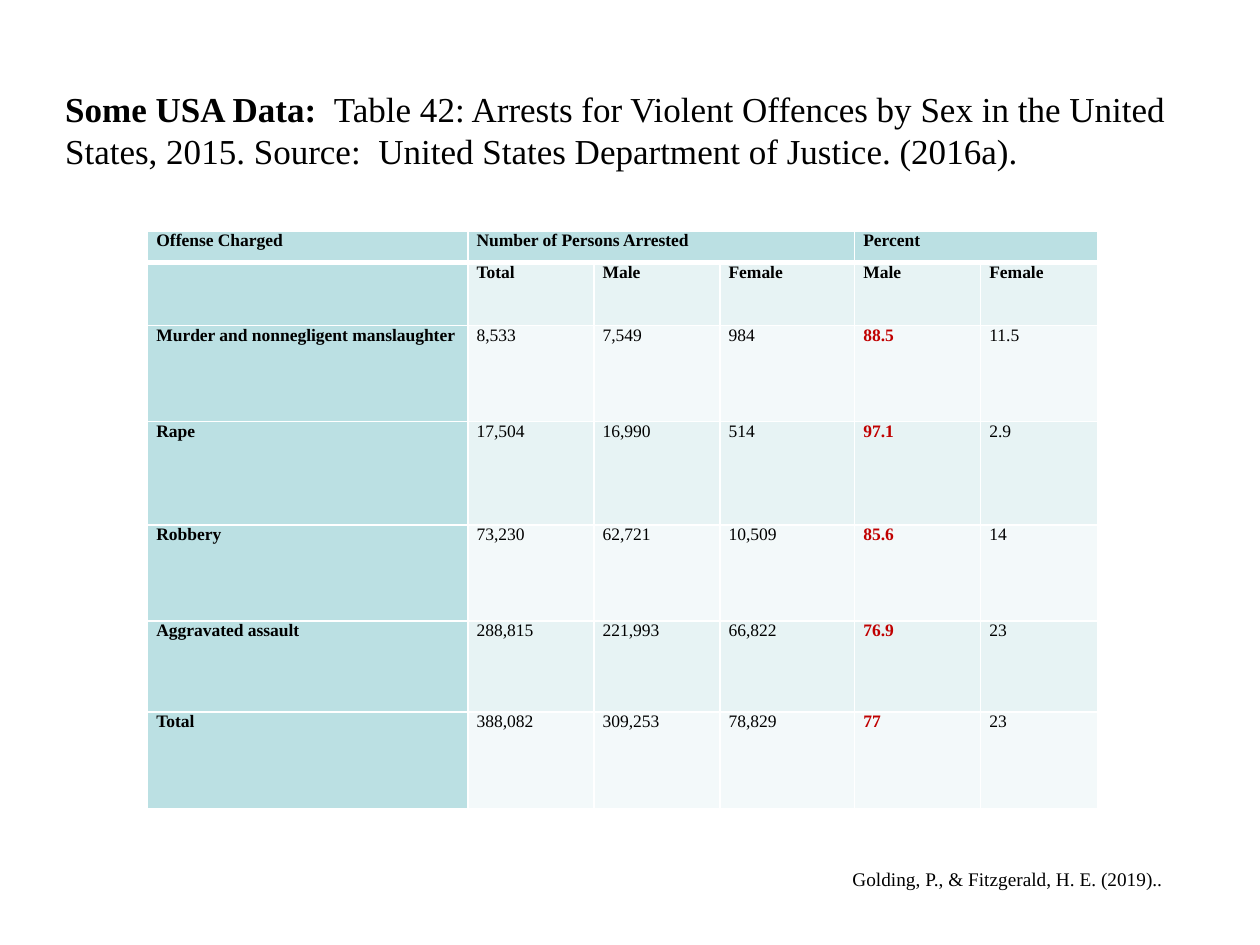
from pptx import Presentation
from pptx.dml.color import RGBColor as RGB
from pptx.enum.text import MSO_ANCHOR as Anchor, MSO_AUTO_SIZE as Auto, PP_ALIGN as Align
from pptx.oxml.ns import qn
from pptx.util import Pt
from lxml.etree import SubElement as Sub

FONT = "Times New Roman"
BLACK = RGB(0x00, 0x00, 0x00)
RED = RGB(0xC0, 0x00, 0x00)
WHITE = RGB(0xFF, 0xFF, 0xFF)
HEAD = RGB(0xBB, 0xE0, 0xE3)
BANDS = (RGB(0xF3, 0xF9, 0xFA), RGB(0xE7, 0xF3, 0xF4))

COLS = (183, 72, 72, 77, 72, 67)
ROWS = (18, 36, 55, 59, 55, 52, 55)
SPANS = ((1, 3), (4, 5))
RED_COL = 4
DATA = (
    ("Offense Charged", "Number of Persons Arrested", "", "", "Percent", ""),
    ("", "Total", "Male", "Female", "Male", "Female"),
    ("Murder and nonnegligent manslaughter", "8,533", "7,549", "984", "88.5", "11.5"),
    ("Rape", "17,504", "16,990", "514", "97.1", "2.9"),
    ("Robbery", "73,230", "62,721", "10,509", "85.6", "14"),
    ("Aggravated assault", "288,815", "221,993", "66,822", "76.9", "23"),
    ("Total", "388,082", "309,253", "78,829", "77", "23"),
)


def add_run(para, text, size, color=BLACK, bold=False, italic=False):
    """Add one formatted run to a paragraph."""
    run = para.add_run()
    run.text = text
    font = run.font
    font.name, font.size, font.bold, font.italic = FONT, Pt(size), bold, italic
    font.color.rgb = color


def add_title(slide):
    """Place and fill the title."""
    title = slide.shapes.title
    title.left, title.top, title.width, title.height = Pt(30), Pt(62), Pt(654), Pt(48)
    frame = title.text_frame
    frame.word_wrap, frame.auto_size = True, Auto.NONE
    frame.vertical_anchor = Anchor.MIDDLE
    frame.margin_bottom = Pt(27)
    para = frame.paragraphs[0]
    para.alignment = Align.LEFT
    add_run(para, "Some USA Data:  ", 20, bold=True)
    add_run(para, "Table 42: Arrests for Violent Offences by Sex in the United States, "
            "2015. Source:  United States Department of Justice. (2016a).", 20)


def set_edges(cell, top, bottom):
    """Draw white borders round a cell."""
    props = cell._tc.get_or_add_tcPr()
    for side, width in (("L", 1), ("R", 1), ("T", top), ("B", bottom)):
        line = Sub(props, qn("a:ln" + side), w=str(Pt(width)))
        Sub(Sub(line, qn("a:solidFill")), qn("a:srgbClr"), val=str(WHITE))


def fill_cell(cell, row, col, text):
    """Format one table cell by its place in the grid."""
    set_edges(cell, 3 if row == 1 else 1, 3 if row == 0 else 1)
    cell.fill.solid()
    cell.fill.fore_color.rgb = HEAD if row == 0 or col == 0 else BANDS[row % 2]
    cell.margin_left = cell.margin_right = Pt(5)
    cell.margin_top = cell.margin_bottom = 0
    if text:
        red = row > 1 and col == RED_COL
        bold = row < 2 or col == 0 or red
        add_run(cell.text_frame.paragraphs[0], text, 10, RED if red else BLACK, bold)


def add_grid(slide):
    """Add the table of arrests."""
    table = slide.shapes.add_table(len(ROWS), len(COLS), Pt(84.4), Pt(132),
                                   Pt(sum(COLS)), Pt(sum(ROWS))).table
    for col, width in zip(table.columns, COLS):
        col.width = Pt(width)
    for row, height in zip(table.rows, ROWS):
        row.height = Pt(height)
    for first, last in SPANS:
        table.cell(0, first).merge(table.cell(0, last))
    for row, texts in enumerate(DATA):
        for col, text in enumerate(texts):
            fill_cell(table.cell(row, col), row, col, text)


def add_cite(slide):
    """Add the citation at the foot."""
    box = slide.shapes.add_textbox(Pt(480), Pt(492), Pt(201), Pt(21))
    frame = box.text_frame
    frame.word_wrap = True
    para = frame.paragraphs[0]
    add_run(para, "Golding, P., & Fitzgerald, H. E. (2019).", 11)
    add_run(para, ".", 11, italic=True)


def main():
    """Build and save the slide."""
    deck = Presentation()
    deck.slide_width, deck.slide_height = Pt(720), Pt(540)
    slide = deck.slides.add_slide(deck.slide_layouts[5])
    add_title(slide)
    add_grid(slide)
    add_cite(slide)
    deck.save("out.pptx")


if __name__ == "__main__":
    main()
